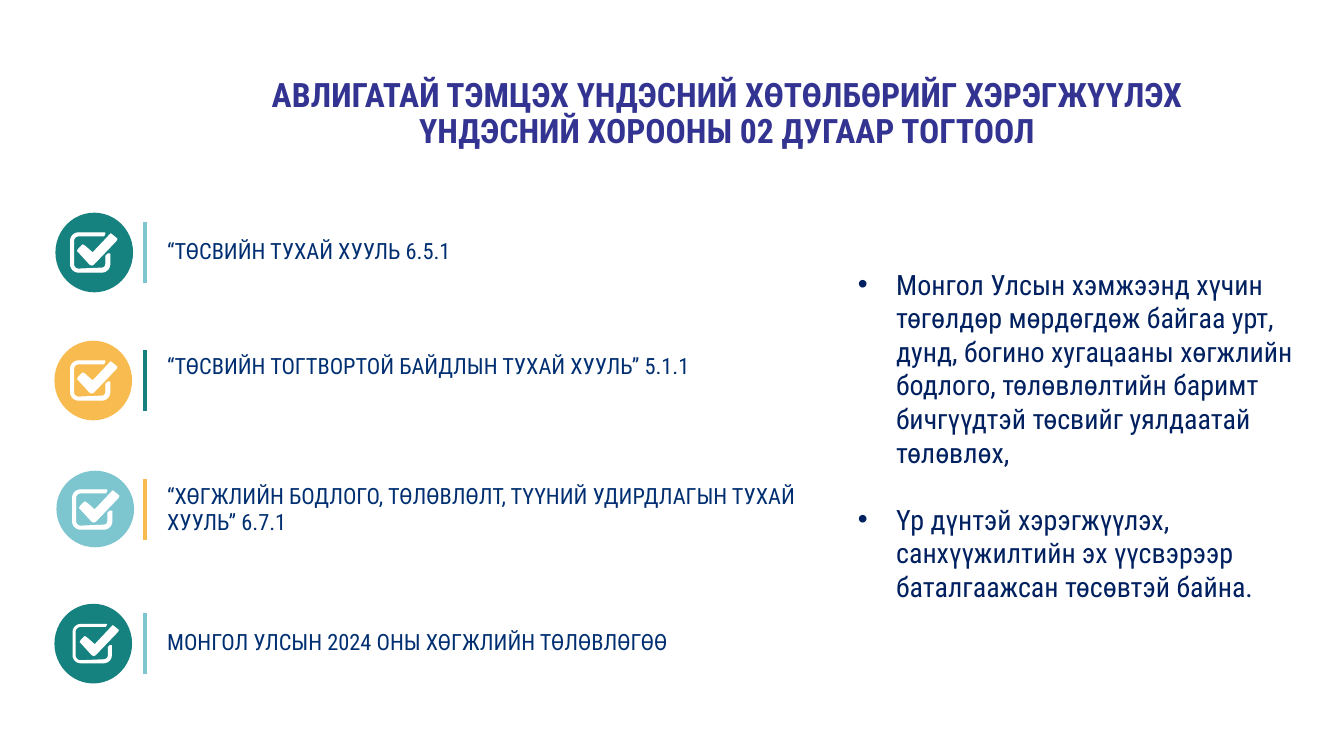
import math
import pptx
import pptx.dml.color
import pptx.enum.shapes
import pptx.enum.text
import pptx.util
from dataclasses import dataclass
from lxml import etree
from pptx.util import Inches


@dataclass
class Theme:
    font: str = "Roboto Condensed"
    teal: str = "16827F"
    gold: str = "F7BB4F"
    aqua: str = "7EC6CF"
    white: str = "FFFFFF"
    law: str = "002F71"
    duty: str = "002060"
    title: str = "333491"
    law_size: int = 16
    duty_size: int = 20
    title_size: int = 24


theme = Theme()
rgb = pptx.dml.color.RGBColor.from_string
align = pptx.enum.text.PP_ALIGN


def arc(x, y, radius, start, end):
    """Points along a quarter circle, angles in degrees."""
    turns = [math.radians(start + (end - start) * i / 6) for i in range(7)]
    return [(x + radius * math.cos(t), y + radius * math.sin(t)) for t in turns]


def add_run(par, text, size, color, bold=False):
    run = par.add_run()
    run.text = text
    run.font.name = theme.font
    run.font.size = pptx.util.Pt(size)
    run.font.bold = bold
    run.font.color.rgb = rgb(color)


# Outlines of the check icon, measured from its top left corner
frame = (
    arc(0.31, 0.31, 0.08, 0, 90)
    + arc(0.08, 0.31, 0.08, 90, 180)
    + arc(0.08, 0.08, 0.08, 180, 270)
    + [(0.34, 0), (0.34, 0.01), (0.33, 0.03)]
    + arc(0.08, 0.08, 0.05, 270, 180)
    + arc(0.08, 0.31, 0.05, 180, 90)
    + arc(0.31, 0.31, 0.04, 90, 0)
    + [(0.35, 0.23), (0.37, 0.21), (0.39, 0.21)]
)
tick = [
    (0.23, 0.31), (0.21, 0.32), (0.19, 0.31), (0.08, 0.19), (0.07, 0.18),
    (0.08, 0.16), (0.11, 0.13), (0.12, 0.12), (0.14, 0.13), (0.22, 0.2),
    (0.39, 0.02), (0.4, 0.01), (0.41, 0.02), (0.45, 0.05), (0.46, 0.06),
    (0.45, 0.08),
]

# Circle left, top, height; icon left, top; colours; text top, width, height; law
rows = [
    (0.55, 2.11, 0.79, 0.7, 2.31, theme.teal, theme.aqua, 2.3, 7.34, 0.37,
     "“ТӨСВИЙН ТУХАЙ ХУУЛЬ 6.5.1"),
    (0.54, 3.38, 0.79, 0.7, 3.58, theme.gold, theme.teal, 3.44, 6.21, 0.37,
     "“ТӨСВИЙН ТОГТВОРТОЙ БАЙДЛЫН ТУХАЙ ХУУЛЬ” 5.1.1"),
    (0.56, 4.67, 0.76, 0.72, 4.86, theme.aqua, theme.gold, 4.73, 6.58, 0.64,
     "“ХӨГЖЛИЙН БОДЛОГО, ТӨЛӨВЛӨЛТ, ТҮҮНИЙ УДИРДЛАГЫН ТУХАЙ ХУУЛЬ” 6.7.1"),
    (0.54, 5.99, 0.79, 0.72, 6.19, theme.teal, theme.aqua, 6.18, 7.21, 0.46,
     "МОНГОЛ УЛСЫН 2024 ОНЫ ХӨГЖЛИЙН ТӨЛӨВЛӨГӨӨ"),
]
duties = [
    "Монгол Улсын хэмжээнд хүчин төгөлдөр мөрдөгдөж байгаа урт, дунд, богино "
    "хугацааны хөгжлийн бодлого, төлөвлөлтийн баримт бичгүүдтэй төсвийг "
    "уялдаатай төлөвлөх,",
    "Үр дүнтэй хэрэгжүүлэх, санхүүжилтийн эх үүсвэрээр баталгаажсан төсөвтэй "
    "байна.",
]

deck = pptx.Presentation()
deck.slide_width = Inches(13.33)
deck.slide_height = Inches(7.5)
slide = deck.slides.add_slide(deck.slide_layouts[5])
shapes = slide.shapes

title = shapes.title
title.left, title.top = Inches(2), Inches(0.72)
title.width, title.height = Inches(10.42), Inches(0.83)
text = title.text_frame
text.word_wrap = True
text.auto_size = pptx.enum.text.MSO_AUTO_SIZE.NONE
text.vertical_anchor = pptx.enum.text.MSO_ANCHOR.MIDDLE
par = text.paragraphs[0]
par.alignment = align.CENTER
par.line_spacing = 0.9
add_run(par, "АВЛИГАТАЙ ТЭМЦЭХ ҮНДЭСНИЙ ХӨТӨЛБӨРИЙГ ХЭРЭГЖҮҮЛЭХ "
        "ҮНДЭСНИЙ ХОРООНЫ 02 ДУГААР ТОГТООЛ",
        theme.title_size, theme.title, True)

for left, top, tall, x, y, color, accent, head, wide, high, law in rows:
    disc = shapes.add_shape(
        pptx.enum.shapes.MSO_SHAPE.OVAL,
        Inches(left), Inches(top), Inches(0.77), Inches(tall))
    disc.shadow.inherit = False
    disc.fill.solid()
    disc.fill.fore_color.rgb = rgb(color)
    disc.line.fill.background()

    paths = [[(Inches(x + a), Inches(y + b)) for a, b in part]
             for part in (frame, tick)]
    pen = shapes.build_freeform(*paths[0][0])
    pen.add_line_segments(paths[0][1:])
    pen.move_to(*paths[1][0])
    pen.add_line_segments(paths[1][1:])
    icon = pen.convert_to_shape()
    icon.shadow.inherit = False
    icon.fill.solid()
    icon.fill.fore_color.rgb = rgb(theme.white)
    if law == rows[-1][-1]:
        icon.line.fill.background()
    else:
        icon.line.color.rgb = rgb(theme.white)
        icon.line.width = pptx.util.Pt(0.75)

    bar = shapes.add_connector(
        pptx.enum.shapes.MSO_CONNECTOR.STRAIGHT,
        Inches(1.44), Inches(y - 0.11), Inches(1.44), Inches(y + 0.5))
    bar.line.color.rgb = rgb(accent)
    bar.line.width = pptx.util.Pt(3)
    etree.SubElement(bar.element.spPr, pptx.oxml.ns.qn("a:effectLst"))

    box = shapes.add_textbox(
        Inches(1.56), Inches(head), Inches(wide), Inches(high))
    box.text_frame.word_wrap = True
    par = box.text_frame.paragraphs[0]
    par.alignment = align.LEFT
    add_run(par, law, theme.law_size, theme.law)

box = shapes.add_textbox(Inches(8.41), Inches(2.6), Inches(4.52), Inches(3.47))
text = box.text_frame
text.word_wrap = True
for i, duty in enumerate(duties):
    par = text.add_paragraph() if i else text.paragraphs[0]
    props = par._p.get_or_add_pPr()
    props.set("marL", str(Inches(0.38)))
    props.set("indent", str(-Inches(0.38)))
    etree.SubElement(props, pptx.oxml.ns.qn("a:buFont"), typeface="Arial")
    etree.SubElement(props, pptx.oxml.ns.qn("a:buChar"), char="•")
    if i:
        par.space_before = pptx.util.Pt(24)
    add_run(par, duty, theme.duty_size, theme.duty)

deck.save("out.pptx")
